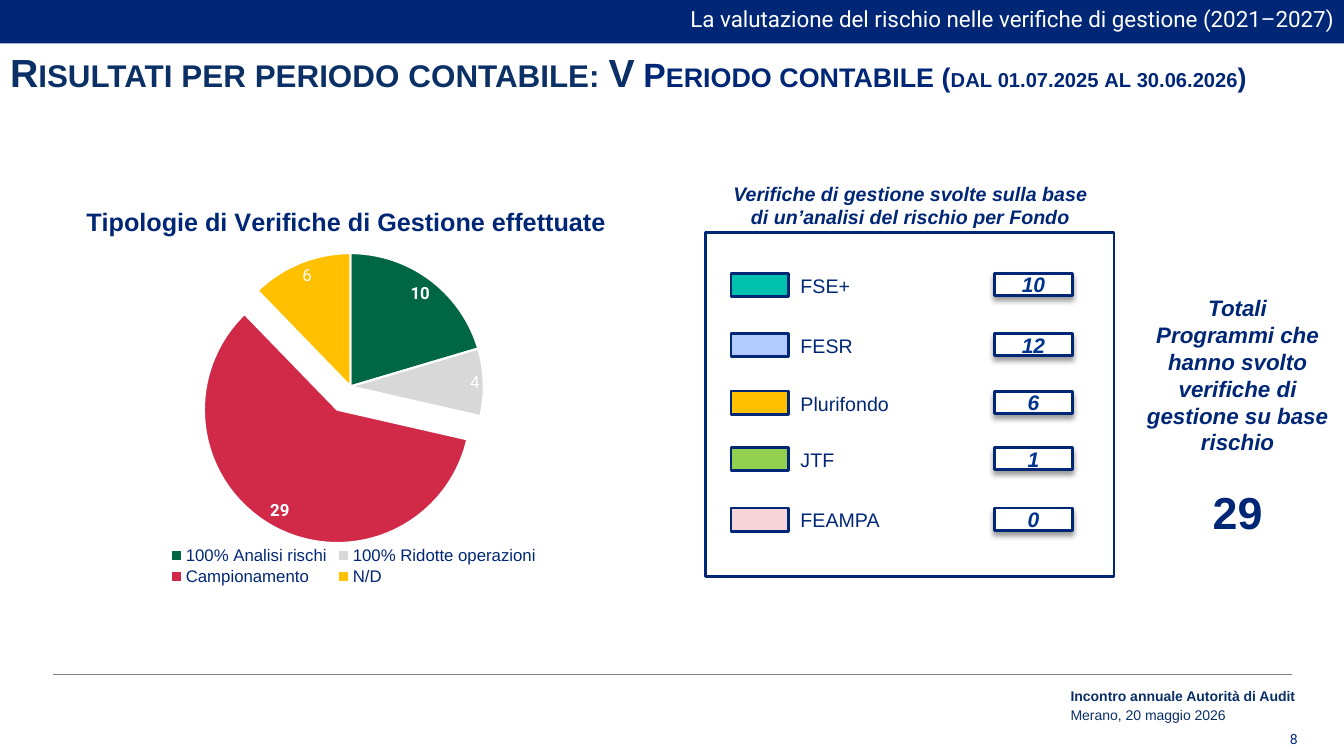
from dataclasses import dataclass
from lxml import etree
from pptx import Presentation
from pptx.chart.data import CategoryChartData as Data
from pptx.dml.color import RGBColor as Rgb
from pptx.enum.chart import XL_CHART_TYPE as Kind
from pptx.enum.chart import XL_LABEL_POSITION as Spot
from pptx.enum.chart import XL_LEGEND_POSITION as Side
from pptx.enum.shapes import MSO_CONNECTOR as Link
from pptx.enum.shapes import MSO_SHAPE as Form
from pptx.enum.text import MSO_ANCHOR as Anchor
from pptx.enum.text import MSO_AUTO_SIZE as Fit
from pptx.enum.text import PP_ALIGN as Align
from pptx.oxml import parse_xml as make
from pptx.oxml.ns import nsdecls, qn
from pptx.util import Inches, Pt


@dataclass(frozen=True)
class Theme:
    sans: str = "Arial"
    alt: str = "Roboto"
    navy: str = "002776"
    ink: str = "0B3066"
    blue: str = "00338D"
    white: str = "FFFFFF"
    gray: str = "808080"
    slices: tuple = ("006643", "D8D8D8", "D12A48", "FFC000")
    head: int = 28
    sub: int = 24
    total: int = 32
    large: int = 18
    lead: int = 16
    count: int = 15
    body: int = 14
    key: int = 12
    small: int = 10


class Deck:
    def __init__(self, theme):
        self.theme = theme
        self.file = Presentation()
        self.file.slide_width = Inches(13.33)
        self.file.slide_height = Inches(7.5)
        self.slide = self.file.slides.add_slide(self.file.slide_layouts[5])
        self.items = self.slide.shapes

    def style(self, font, size, color=None, bold=False, slant=False, face=None):
        font.name = face or self.theme.sans
        font.size = Pt(size)
        font.bold = bold
        font.italic = slant
        font.color.rgb = Rgb.from_string(color or self.theme.navy)

    def put(self, shape, lines, align=Align.LEFT, anchor=Anchor.TOP, pad=None, gap=0):
        frame = shape.text_frame
        frame.word_wrap = True
        frame.auto_size = Fit.NONE
        frame.vertical_anchor = anchor
        if pad is not None:
            frame.margin_left = frame.margin_right = Inches(pad)
            frame.margin_top = frame.margin_bottom = Inches(pad)
        for spot, runs in enumerate(lines):
            para = frame.add_paragraph() if spot else frame.paragraphs[0]
            para.alignment = align
            if spot:
                para.space_before = Pt(gap)
            for text, look in runs:
                run = para.add_run()
                run.text = text
                self.style(run.font, **look)

    def text(self, place, lines, **how):
        box = self.items.add_textbox(*map(Inches, place))
        self.put(box, lines, **how)

    def title(self, place, runs):
        shape = self.items.title
        shape.left, shape.top, shape.width, shape.height = map(Inches, place)
        self.put(shape, [runs])
        for run in shape.text_frame.paragraphs[0].runs:
            run.font._element.set("cap", "small")

    def rect(self, place, fill=None, edge=None):
        box = self.items.add_shape(Form.RECTANGLE, *map(Inches, place))
        box.shadow.inherit = False
        if fill:
            box.fill.solid()
            box.fill.fore_color.rgb = Rgb.from_string(fill)
        else:
            box.fill.background()
        if edge:
            box.line.color.rgb = Rgb.from_string(edge)
            box.line.width = Pt(2)
        else:
            box.line.fill.background()
        return box

    def shade(self, box):
        glow = box._element.spPr.find(qn("a:effectLst"))
        glow.append(make(
            f'<a:outerShdw {nsdecls("a")} blurRad="{Pt(4)}" dist="{Pt(3)}" dir="5400000" '
            'algn="t" rotWithShape="0"><a:srgbClr val="000000"><a:alpha val="40000"/>'
            '</a:srgbClr></a:outerShdw>'))

    def rule(self, start, end):
        line = self.items.add_connector(Link.STRAIGHT, *map(Inches, start + end))
        line.line.color.rgb = Rgb.from_string(self.theme.gray)
        line.line.width = Pt(0.75)
        etree.SubElement(line._element.spPr, qn("a:effectLst"))

    def place(self, node, index, inner=False, **parts):
        old = node.find(qn("c:layout"))
        if old is not None:
            node.remove(old)
        tags = '<c:layoutTarget val="inner"/>' if inner else ""
        tags += '<c:xMode val="edge"/><c:yMode val="edge"/>'
        tags += "".join(f'<c:{key} val="{val}"/>' for key, val in parts.items())
        node.insert(index, make(
            f'<c:layout {nsdecls("c")}><c:manualLayout>{tags}</c:manualLayout></c:layout>'))

    def pie(self, place, title, pairs, apart, plain):
        theme = self.theme
        data = Data()
        data.categories = [name for name, _ in pairs]
        data.add_series("Series 1", [val for _, val in pairs])
        chart = self.items.add_chart(Kind.PIE, *map(Inches, place), data).chart
        self.style(chart.font, theme.small, bold=True, face=theme.alt)
        chart.has_title = True
        run = chart.chart_title.text_frame.paragraphs[0].add_run()
        run.text = title
        self.style(run.font, theme.large, bold=True)
        self.place(chart.chart_title._element, 1, x=0.11, y=0.04)

        chart.has_legend = True
        chart.legend.position = Side.BOTTOM
        chart.legend.include_in_layout = False
        self.style(chart.legend.font, theme.key)
        self.place(chart.legend._element, 1, x=0.23, y=0.89, w=0.54, h=0.11)

        plot = chart.plots[0]
        plot.vary_by_categories = True
        self.place(plot._element.getparent(), 0, True, x=0.3, y=0.17, w=0.39, h=0.66)
        row = plot.series[0]
        tags = row.data_labels
        tags.show_value = True
        tags.position = Spot.BEST_FIT
        self.style(tags.font, theme.key, theme.white, True, face=theme.alt)
        for spot, color in enumerate(theme.slices):
            point = row.points[spot]
            point.format.fill.solid()
            point.format.fill.fore_color.rgb = Rgb.from_string(color)
            point.format.line.color.rgb = Rgb.from_string(theme.white)
            point.format.line.width = Pt(1.5)
            if spot in plain:
                label = point.data_label
                self.style(label.font, theme.key, theme.white, face=theme.alt)
                label.position = Spot.BEST_FIT
        for node in row._element.findall(qn("c:dPt")):
            if node.find(qn("c:idx")).get("val") == str(apart):
                node.find(qn("c:spPr")).addprevious(
                    make(f'<c:explosion {nsdecls("c")} val="20"/>'))

    def fund(self, top, name, count, color):
        theme = self.theme
        self.rect((7.25, top, 0.57, 0.23), color, theme.navy)
        self.text((7.88, top - 0.05, 1.34, 0.34), [[(name, dict(size=theme.body))]],
                  anchor=Anchor.MIDDLE, pad=0.06)
        box = self.rect((9.86, top, 0.78, 0.22), theme.white, theme.navy)
        self.shade(box)
        look = dict(size=theme.count, color=theme.blue, bold=True, slant=True)
        self.put(box, [[(count, look)]], Align.CENTER, Anchor.MIDDLE, 0.06)


def main():
    theme = Theme()
    deck = Deck(theme)
    deck.rule((0.53, 6.69), (12.81, 6.69))
    page = dict(size=theme.small, face=theme.alt)
    deck.text((8.83, 7.23, 4.14, 0.2), [[("8", page)]], align=Align.RIGHT, anchor=Anchor.MIDDLE)
    band = deck.rect((0, 0, 13.33, 0.43), theme.navy)
    look = dict(size=theme.lead, color=theme.white, face=theme.alt)
    deck.put(band, [[("La valutazione del rischio nelle verifiche di gestione (2021–2027)", look)]],
             Align.RIGHT)
    foot = dict(size=theme.small, color=theme.ink)
    deck.text((10.52, 6.77, 2.7, 0.43),
              [[("Incontro annuale Autorità di Audit", dict(foot, bold=True))],
               [("Merano, 20 maggio 2026", foot)]], gap=2)
    sub = dict(size=theme.sub, bold=True)
    deck.title((0, 0.43, 13.33, 1.18), [
        ("Risultati per periodo contabile: V ", dict(size=theme.head, color=theme.ink, bold=True)),
        ("Periodo contabile (", sub),
        ("dal 01.07.2025 al 30.06.2026", dict(sub, size=theme.large)),
        (")", sub)])

    deck.pie((0.05, 1.83, 6.92, 4.01), "Tipologie di Verifiche di Gestione effettuate",
             [("100% Analisi rischi", 10), ("100% Ridotte operazioni", 4),
              ("Campionamento", 29), ("N/D", 6)], apart=2, plain=(1, 3))

    deck.rect((7, 2.31, 4.05, 3.41), edge=theme.navy)
    for fund in [(2.71, "FSE+", "10", "00C0AE"), (3.31, "FESR", "12", "B1CBFF"),
                 (3.88, "Plurifondo", "6", "FFC000"), (4.44, "JTF", "1", "92D050"),
                 (5.04, "FEAMPA", "0", "F6D4DA")]:
        deck.fund(*fund)

    bold = dict(bold=True, slant=True)
    mid = dict(align=Align.CENTER, pad=0.06)
    deck.text((7.12, 1.84, 3.82, 0.39),
              [[("Verifiche di gestione svolte sulla base di un’analisi del rischio per Fondo",
                 dict(bold, size=theme.body))]], anchor=Anchor.MIDDLE, **mid)
    deck.text((11.31, 2.86, 1.93, 0.27),
              [[("Totali Programmi che hanno svolto verifiche di gestione su base rischio",
                 dict(bold, size=theme.lead))]], **mid)
    deck.text((11.68, 4.64, 1.19, 0.88), [[("29", dict(size=theme.total, bold=True))]],
              anchor=Anchor.MIDDLE, **mid)
    deck.file.save("out.pptx")


if __name__ == "__main__":
    main()
